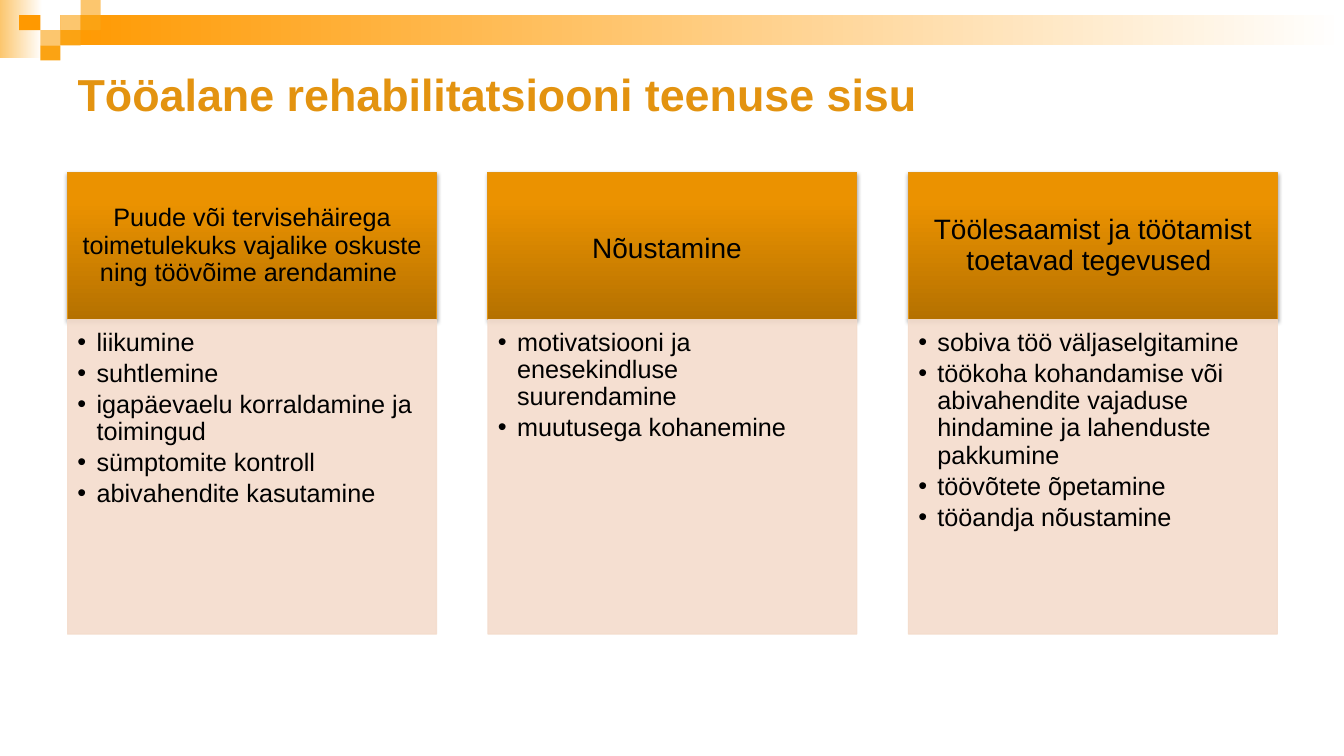
from dataclasses import dataclass

from pptx import Presentation
from pptx import util as u
from pptx.dml.color import RGBColor
from pptx.enum import shapes, text
from pptx.oxml import parse_xml
from pptx.oxml.ns import nsdecls, qn
from lxml import etree

EMU_PER_PX = 9144
FONT = "Arial"
ORANGE = "E39310"
BLACK = "000000"
PEACH = "F4DCCC"
HEADER_STOPS = ((0, "B57100"), (80, "EB9200"), (100, "ED9300"))
COLUMN_LEFT, COLUMN_STEP, COLUMN_WIDTH = 67, 417, 366
HEADER_TOP, HEADER_HEIGHT, BODY_HEIGHT = 171, 146, 312


@dataclass(frozen=True)
class Tile:
    left: int
    top: int
    width: int
    height: int
    stops: tuple[tuple[int, str], ...]


@dataclass(frozen=True)
class Column:
    heading: str
    size: int
    inset: tuple[int, int]
    items: tuple[str, ...]
    space_size: int | None = None


LIGHT, MEDIUM, STRONG = ((0, "FCC66E"),), ((0, "FBA313"),), ((0, "FF9900"),)
TILES = (
    Tile(0, 0, 42, 58, LIGHT + ((100, "FFFFFF"),)),
    Tile(60, 15, 1273, 30, STRONG + ((100, "FFFFFF"),)),
    Tile(60, 15, 20, 15, LIGHT),
    Tile(80, 0, 20, 15, LIGHT),
    Tile(80, 15, 20, 15, MEDIUM),
    Tile(40, 30, 20, 15, LIGHT),
    Tile(19, 15, 21, 15, STRONG),
    Tile(60, 30, 20, 15, MEDIUM),
    Tile(40, 45, 20, 15, MEDIUM),
)
COLUMNS = (
    Column(
        "Puude või tervisehäirega toimetulekuks vajalike oskuste ning töövõime arendamine ",
        18,
        (14, 8),
        (
            "liikumine",
            "suhtlemine",
            "igapäevaelu korraldamine ja toimingud",
            "sümptomite kontroll",
            "abivahendite kasutamine",
        ),
    ),
    Column(
        "Nõustamine",
        20,
        (16, 9),
        ("motivatsiooni ja enesekindluse suurendamine", "muutusega kohanemine"),
        space_size=28,
    ),
    Column(
        "Töölesaamist ja töötamist toetavad tegevused ",
        20,
        (16, 9),
        (
            "sobiva töö väljaselgitamine",
            "töökoha kohandamise või abivahendite vajaduse hindamine ja lahenduste pakkumine",
            "töövõtete õpetamine",
            "tööandja nõustamine",
        ),
    ),
)


def px(length: int) -> int:
    return u.Emu(length * EMU_PER_PX)


def set_color(target, color: str) -> None:
    target.rgb = RGBColor.from_string(color)


def set_font(font, size: int, color: str, bold: bool = False) -> None:
    font.name = FONT
    font.size = u.Pt(size)
    font.bold = bold
    set_color(font.color, color)


def add_box(slide, left: int, top: int, width: int, height: int):
    shape = slide.shapes.add_shape(
        shapes.MSO_SHAPE.RECTANGLE, px(left), px(top), px(width), px(height)
    )
    shape.shadow.inherit = False
    shape.line.fill.background()
    return shape


def set_fill(shape, stops: tuple[tuple[int, str], ...], angle: int = 0) -> None:
    if len(stops) == 1:
        shape.fill.solid()
        set_color(shape.fill.fore_color, stops[0][1])
        return
    marks = "".join(
        f'<a:gs pos="{place * 1000}"><a:srgbClr val="{color}"/></a:gs>'
        for place, color in stops
    )
    gradient = parse_xml(
        f'<a:gradFill {nsdecls("a")} rotWithShape="1"><a:gsLst>{marks}</a:gsLst>'
        f'<a:lin ang="{angle * 60000}" scaled="0"/></a:gradFill>'
    )
    shape._element.spPr.find(qn("a:prstGeom")).addnext(gradient)


def set_line(shape, color: str) -> None:
    shape.line.width = u.Pt(0.75)
    shape.line.fill.solid()
    set_color(shape.line.color, color)


def add_shadow(shape) -> None:
    shape._element.spPr.find(qn("a:effectLst")).append(
        parse_xml(
            f'<a:outerShdw {nsdecls("a")} blurRad="39370" dist="22860" dir="5400000" '
            'rotWithShape="0"><a:srgbClr val="000000"><a:alpha val="35000"/>'
            "</a:srgbClr></a:outerShdw>"
        )
    )


def set_frame(shape, insets: tuple[int, int, int, int], anchor):
    frame = shape.text_frame
    frame.word_wrap = True
    frame.vertical_anchor = anchor
    frame.margin_left, frame.margin_top, frame.margin_right, frame.margin_bottom = map(px, insets)
    return frame


def add_title(slide) -> None:
    title = slide.shapes.title
    title.left, title.top, title.width, title.height = map(px, (67, 49, 1200, 87))
    frame = set_frame(title, (10, 5, 10, 5), text.MSO_ANCHOR.MIDDLE)
    frame.auto_size = text.MSO_AUTO_SIZE.NONE
    frame.text = "Tööalane rehabilitatsiooni teenuse sisu"
    paragraph = frame.paragraphs[0]
    paragraph.alignment = text.PP_ALIGN.LEFT
    set_font(paragraph.font, 32, ORANGE, bold=True)


def add_header(slide, column: Column, left: int) -> None:
    header = add_box(slide, left, HEADER_TOP, COLUMN_WIDTH, HEADER_HEIGHT)
    set_fill(header, HEADER_STOPS, 270)
    set_line(header, ORANGE)
    add_shadow(header)
    frame = set_frame(header, column.inset * 2, text.MSO_ANCHOR.MIDDLE)
    paragraph = frame.paragraphs[0]
    paragraph.add_run().text = column.heading
    paragraph.alignment = text.PP_ALIGN.CENTER
    paragraph.line_spacing = 0.9
    set_font(paragraph.font, column.size, BLACK)
    if column.space_size:
        space = paragraph.add_run()
        space.text = " "
        space.font.size = u.Pt(column.space_size)


def add_body(slide, column: Column, left: int) -> None:
    body = add_box(slide, left, HEADER_TOP + HEADER_HEIGHT, COLUMN_WIDTH, BODY_HEIGHT)
    set_fill(body, ((0, PEACH),))
    set_line(body, PEACH)
    for color in body._element.spPr.iter(qn("a:srgbClr")):
        etree.SubElement(color, qn("a:alpha"), val="90000")
    frame = set_frame(body, (10, 10, 14, 16), text.MSO_ANCHOR.TOP)
    frame.text = "\n".join(column.items)
    for paragraph in frame.paragraphs:
        properties = paragraph._p.get_or_add_pPr()
        properties.set("marL", str(px(19)))
        properties.set("indent", str(px(-19)))
        etree.SubElement(properties, qn("a:buFont"), typeface=FONT)
        etree.SubElement(properties, qn("a:buChar"), char="•")
        paragraph.alignment = text.PP_ALIGN.LEFT
        paragraph.line_spacing = 0.9
        paragraph.space_after = u.Pt(2.7)
        set_font(paragraph.font, 18, BLACK)


def main() -> None:
    presentation = Presentation()
    presentation.slide_width, presentation.slide_height = px(1333), px(750)
    slide = presentation.slides.add_slide(presentation.slide_layouts[5])
    for tile in TILES:
        set_fill(add_box(slide, tile.left, tile.top, tile.width, tile.height), tile.stops)
    add_title(slide)
    for index, column in enumerate(COLUMNS):
        left = COLUMN_LEFT + index * COLUMN_STEP
        add_header(slide, column, left)
        add_body(slide, column, left)
    presentation.save("out.pptx")


if __name__ == "__main__":
    main()
